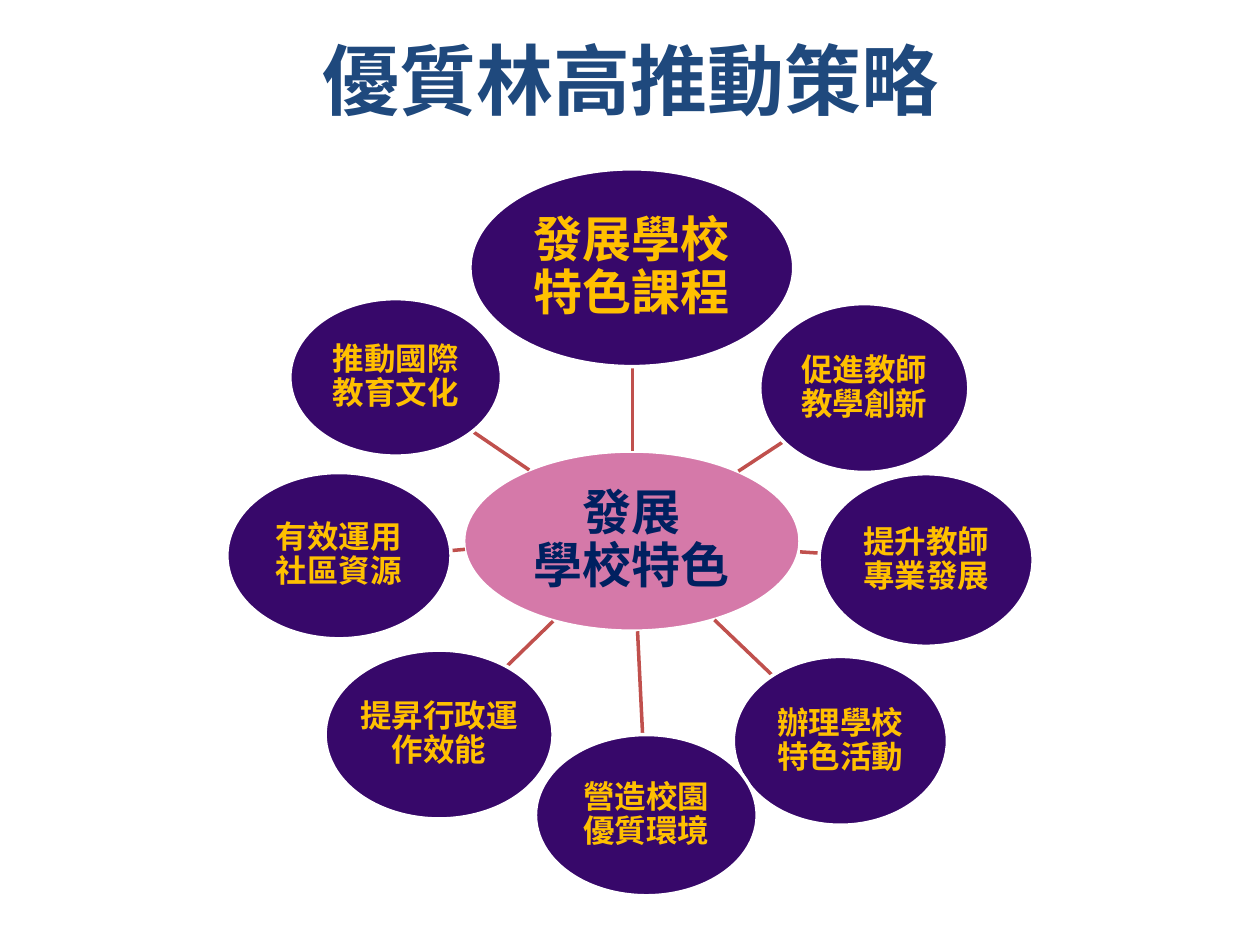
from dataclasses import dataclass

from lxml import etree
from pptx import Presentation, util as u
from pptx.dml.color import RGBColor
from pptx.enum import shapes, text
from pptx.oxml import ns

UNIT = 9144
COLORS = {
    "title": "1F497D", "hub": "D579A9", "node": "37086A", "edge": "FFFFFF",
    "spoke": "C0504D", "navy": "002060", "gold": "FFC000",
}
SC = "Noto Sans CJK SC"
TC = "Noto Sans CJK TC"


@dataclass
class Style:
    size: int
    color: str
    face: str
    east: str


@dataclass
class Oval:
    label: str
    box: tuple[int, int, int, int]
    fill: str
    style: Style
    inset: int = 1


@dataclass
class Spoke:
    start: tuple[int, int]
    end: tuple[int, int]


HEAD = Style(44, "title", SC, SC)
CORE = Style(28, "navy", SC, SC)
MAIN = Style(28, "gold", TC, TC)
NODE = Style(18, "gold", "Calibri", TC)

HUB = Oval("發展\n學校特色", (368, 358, 267, 143), "hub", CORE, 2)
RING = [
    (Spoke((502, 358), (502, 291)),
     Oval("發展學校特色課程", (373, 134, 257, 157), "node", MAIN, 2)),
    (Spoke((586, 374), (621, 351)),
     Oval("促進教師教學創新", (603, 241, 166, 134), "node", NODE)),
    (Spoke((635, 438), (650, 439)),
     Oval("提升教師專業發展", (650, 376, 170, 137), "node", NODE)),
    (Spoke((567, 492), (613, 536)),
     Oval("辦理學校特色活動", (582, 521, 170, 134), "node", NODE)),
    (Spoke((506, 501), (510, 583)),
     Oval("營造校園優質環境", (425, 583, 176, 128), "node", NODE)),
    (Spoke((439, 493), (402, 529)),
     Oval("提昇行政運作效能", (258, 516, 181, 134), "node", NODE)),
    (Spoke((369, 436), (358, 437)),
     Oval("有效運用社區資源", (180, 375, 178, 132), "node", NODE)),
    (Spoke((420, 373), (376, 343)),
     Oval("推動國際教育文化", (230, 237, 168, 125), "node", NODE)),
]


def px(n: int) -> int:
    return n * UNIT


def rgb(name: str) -> RGBColor:
    return RGBColor.from_string(COLORS[name])


def put(obj, vals: dict) -> None:
    for key, val in vals.items():
        setattr(obj, key, val)


def write(shape, label: str, style: Style, pad: int, gap: float) -> None:
    frame = shape.text_frame
    sides = ("left", "top", "right", "bottom")
    put(frame, {f"margin_{side}": px(pad) for side in sides})
    put(frame, {"word_wrap": True, "vertical_anchor": text.MSO_ANCHOR.MIDDLE})
    para = frame.paragraphs[0]
    para.text = label
    put(para, {"alignment": text.PP_ALIGN.CENTER, "line_spacing": gap})
    for run in para.runs:
        put(run.font, {"size": u.Pt(style.size), "bold": True, "name": style.face})
        run.font.color.rgb = rgb(style.color)
        east = etree.SubElement(run.font._element, ns.qn("a:ea"))
        east.set("typeface", style.east)


def stroke(shape, color: str) -> None:
    shape.line.color.rgb = rgb(color)
    shape.line.width = u.Pt(2)


def draw_oval(slide, oval: Oval) -> None:
    shape = slide.shapes.add_shape(shapes.MSO_SHAPE.OVAL, *map(px, oval.box))
    shape.shadow.inherit = False
    shape.fill.solid()
    shape.fill.fore_color.rgb = rgb(oval.fill)
    stroke(shape, "edge")
    write(shape, oval.label, oval.style, oval.inset, 0.9)


def draw_spoke(slide, spoke: Spoke) -> None:
    line = slide.shapes.add_connector(
        shapes.MSO_CONNECTOR.STRAIGHT, *map(px, spoke.start + spoke.end))
    stroke(line, "spoke")
    etree.SubElement(line._element.spPr, ns.qn("a:effectLst"))


def main() -> None:
    deck = Presentation()
    put(deck, {"slide_width": px(1000), "slide_height": px(750)})
    slide = deck.slides.add_slide(deck.slide_layouts[5])
    title = slide.shapes.title
    put(title, {"left": px(51), "top": px(0), "width": px(900), "height": px(125)})
    write(title, "優質林高推動策略", HEAD, 5, 1.0)
    draw_oval(slide, HUB)
    for spoke, oval in RING:
        draw_spoke(slide, spoke)
        draw_oval(slide, oval)
    deck.save("out.pptx")


if __name__ == "__main__":
    main()
